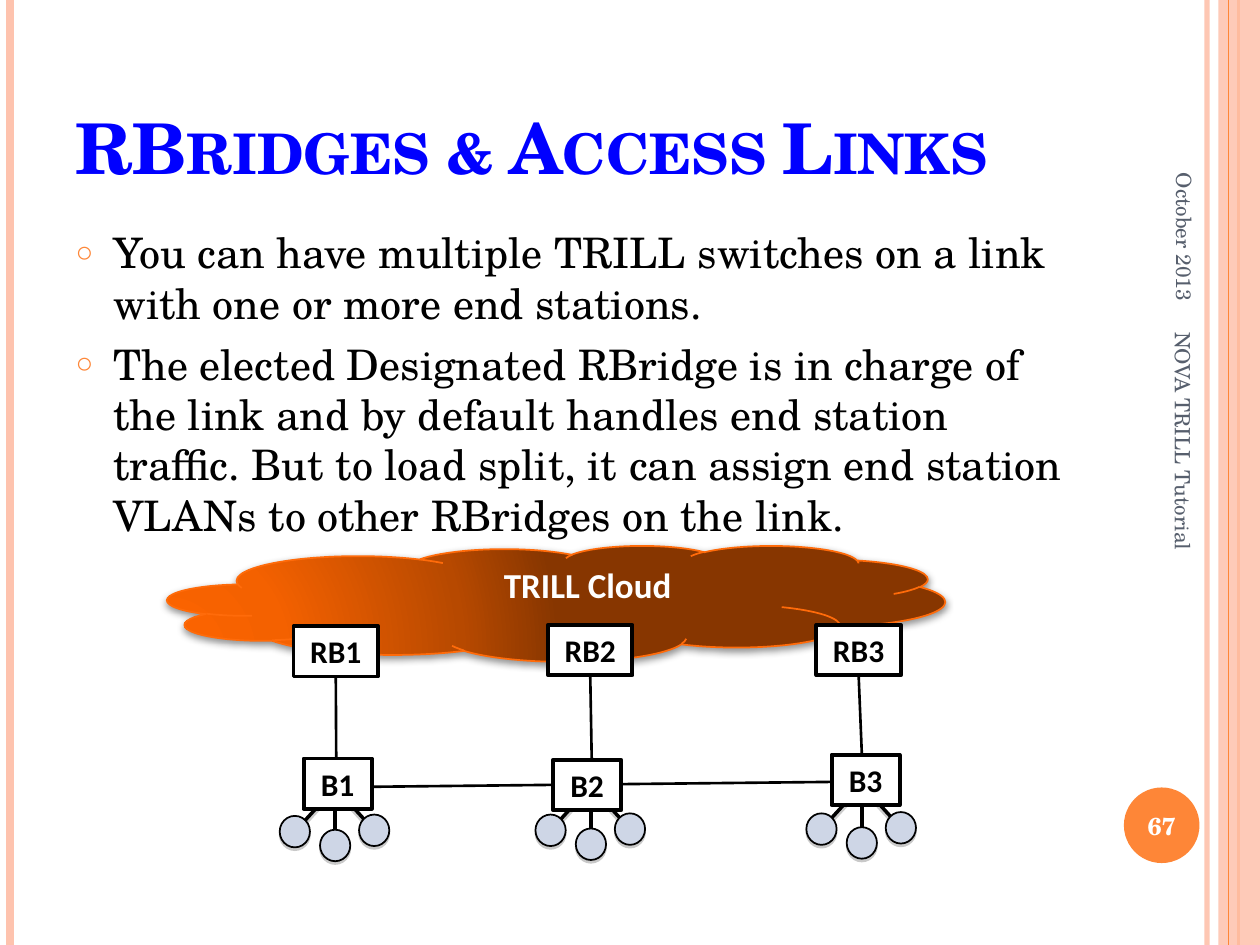
from collections import namedtuple

from lxml.etree import SubElement
from pptx import Presentation
from pptx.dml.color import RGBColor
from pptx.enum.shapes import MSO_CONNECTOR, MSO_SHAPE
from pptx.enum.text import MSO_ANCHOR as Anchor, MSO_AUTO_SIZE as AutoSize, PP_ALIGN as Align
from pptx.oxml import parse_xml
from pptx.oxml.ns import nsdecls, qn
from pptx.util import Inches, Pt

# The slide is a grid of 100 columns by 75 rows.
COLUMNS, ROWS = 100, 75
WIDTH, HEIGHT = Inches(10), Inches(7.5)

WHITE = RGBColor(0xFF, 0xFF, 0xFF)
BLACK = RGBColor(0, 0, 0)
BLUE = RGBColor(0, 0, 0xFF)
SLATE = RGBColor(0x57, 0x5F, 0x6D)
ORANGE = RGBColor(0xFE, 0x86, 0x37)
PEACH = RGBColor(0xFE, 0xC3, 0xAE)
CLOUD_EDGE = RGBColor(0xFF, 0x6B, 0x0A)
HOST_FILL = RGBColor(0xCE, 0xD6, 0xE6)
SHADOW_GREY = RGBColor(0x80, 0x80, 0x80)
CLOUD_STOPS = [(0, "FD6400"), (30, "F46100"), (75, "B74900"), (100, "873600")]

SERIF, SANS = "TeX Gyre Schola", "Calibri"
TITLE_FONT = {"name": SERIF, "size": Pt(40), "bold": True}
BODY_FONT = {"name": SERIF, "size": Pt(24)}
MARGIN_FONT = {"name": SERIF, "size": Pt(12)}
NUMBER_FONT = {"name": SERIF, "size": Pt(14), "bold": True}
NODE_FONT = {"name": SANS, "size": Pt(18), "bold": True}
CLOUD_FONT = {"name": SANS, "size": Pt(20), "bold": True}

Box = namedtuple("Box", "left top width height")
Shadow = namedtuple("Shadow", "color alpha blur distance")
CLOUD_SHADOW = Shadow(BLACK, 42, 4, 1.6)
HOST_SHADOW = Shadow(SHADOW_GREY, 42, 0, 1.6)
DROP_SHADOW = Shadow(SHADOW_GREY, 40, 0, 2)

TITLE = "RBridges & Access Links"
POINTS = [
    "You can have multiple TRILL switches on a link with one or more end stations.",
    "The elected Designated RBridge is in charge of the link and by default handles "
    "end station traffic. But to load split, it can assign end station VLANs to "
    "other RBridges on the link.",
]


def x(column):
    return round(WIDTH * column / COLUMNS)


def y(row):
    return round(HEIGHT * row / ROWS)


def extent(box):
    return x(box.left), y(box.top), x(box.width), y(box.height)


def centred(column, row, width, height):
    return Box(column - width / 2, row - height / 2, width, height)


def set_alpha(color_element, percent):
    SubElement(color_element, qn("a:alpha"), val=str(percent * 1000))


def set_effects(item, shadow=None):
    """Replace the theme shadow by the given one, or by none; call after fill and line."""
    effects = SubElement(item._element.spPr, qn("a:effectLst"))
    if shadow:
        outer = SubElement(
            effects, qn("a:outerShdw"), blurRad=str(Pt(shadow.blur)),
            dist=str(Pt(shadow.distance)), dir="5400000", rotWithShape="0")
        set_alpha(SubElement(outer, qn("a:srgbClr"), val=str(shadow.color)), shadow.alpha)


def add_line(slide, start, end, color, weight, alpha=None, shadow=None):
    line = slide.shapes.add_connector(
        MSO_CONNECTOR.STRAIGHT, x(start[0]), y(start[1]), x(end[0]), y(end[1]))
    line.line.color.rgb = color
    line.line.width = Pt(weight)
    if alpha:
        set_alpha(line._element.spPr.find(".//" + qn("a:srgbClr")), alpha)
    set_effects(line, shadow)


def add_figure(slide, preset, box, fill, edge=None, weight=1, shadow=None):
    figure = slide.shapes.add_shape(preset, *extent(box))
    figure.fill.solid()
    figure.fill.fore_color.rgb = fill
    if edge is None:
        figure.line.fill.background()
    else:
        figure.line.color.rgb = edge
        figure.line.width = Pt(weight)
    set_effects(figure, shadow)
    return figure


def write(frame, lines, font, color, align=Align.LEFT, anchor=Anchor.TOP, wrap=True):
    frame_format = {"word_wrap": wrap, "auto_size": AutoSize.NONE, "vertical_anchor": anchor}
    for key, value in frame_format.items():
        setattr(frame, key, value)
    for index, line in enumerate(lines):
        paragraph = frame.add_paragraph() if index else frame.paragraphs[0]
        paragraph.alignment = align
        run = paragraph.add_run()
        run.text = line
        run.font.color.rgb = color
        for key, value in font.items():
            setattr(run.font, key, value)


def add_label(slide, box, line, font, color, rotation=0, **layout):
    label = slide.shapes.add_textbox(*extent(box))
    label.rotation = rotation
    write(label.text_frame, [line], font, color, **layout)


def place(placeholder, box):
    placeholder.left, placeholder.top, placeholder.width, placeholder.height = extent(box)
    return placeholder.text_frame


def add_stripes(slide):
    for column, color, weight, alpha in [
            (95.8, PEACH, 3, 93), (0.8, PEACH, 4.5, None), (98.3, ORANGE, 1.5, None)]:
        add_line(slide, (column, 0), (column, ROWS), color, weight, alpha)
    band = add_figure(slide, MSO_SHAPE.RECTANGLE, Box(96.7, 0, 3.3, ROWS), PEACH)
    set_alpha(band._element.spPr.find(".//" + qn("a:srgbClr")), 87)
    add_line(slide, (97.5, 0), (97.5, ROWS), ORANGE, 0.75)


def add_margin_notes(slide):
    add_figure(slide, MSO_SHAPE.OVAL, centred(92.2, 65.5, 6, 6), ORANGE)
    add_label(slide, centred(92.2, 65.5, 6.7, 5.7), "67", NUMBER_FONT, WHITE,
              align=Align.CENTER, anchor=Anchor.MIDDLE)
    add_label(slide, centred(94, 13.9, 22, 4.2), "October 2013", MARGIN_FONT, SLATE,
              rotation=90, align=Align.RIGHT, anchor=Anchor.MIDDLE)
    add_label(slide, centred(93.9, 42.9, 35, 4), "NOVA TRILL Tutorial", MARGIN_FONT, SLATE,
              rotation=90, anchor=Anchor.MIDDLE)


def add_title(slide, box):
    frame = place(slide.shapes.title, box)
    write(frame, [TITLE], TITLE_FONT, BLUE, anchor=Anchor.BOTTOM)
    frame.paragraphs[0].runs[0].font._element.set("cap", "small")


def add_points(slide, box):
    frame = place(slide.placeholders[1], box)
    write(frame, POINTS, BODY_FONT, BLACK)
    for paragraph in frame.paragraphs:
        paragraph.space_before = Pt(6)
        properties = paragraph._p.get_or_add_pPr()
        properties.set("marL", str(Inches(0.3)))
        properties.set("indent", str(-Inches(0.3)))
        bullet_color = SubElement(properties, qn("a:buClr"))
        SubElement(bullet_color, qn("a:srgbClr"), val=str(ORANGE))
        SubElement(properties, qn("a:buSzPct"), val="70000")
        SubElement(properties, qn("a:buChar"), char="○")


def add_cloud(slide, box):
    cloud = add_figure(slide, MSO_SHAPE.CLOUD, box, CLOUD_EDGE, CLOUD_EDGE, 1, CLOUD_SHADOW)
    stops = "".join(f'<a:gs pos="{share * 1000}"><a:srgbClr val="{color}"/></a:gs>'
                    for share, color in CLOUD_STOPS)
    gradient = parse_xml(
        f'<a:gradFill {nsdecls("a")} rotWithShape="1"><a:gsLst>{stops}</a:gsLst>'
        '<a:path path="circle"><a:fillToRect l="5000" t="100000" r="120000" b="10000"/>'
        '</a:path></a:gradFill>')
    properties = cloud._element.spPr
    properties.replace(properties.find(qn("a:solidFill")), gradient)


def add_node(slide, box, name):
    node = add_figure(slide, MSO_SHAPE.RECTANGLE, box, WHITE, BLACK, 2.25)
    write(node.text_frame, [name], NODE_FONT, BLACK, Align.CENTER, wrap=False)


def add_access_link(slide, number, hub, switch, bridge):
    """Draw one RBridge, its bridge and three end stations; points are centres."""
    add_node(slide, centred(*switch, 6.7, 4), f"RB{number}")
    add_line(slide, (hub[0] + 0.1, hub[1]), (switch[0], switch[1] + 2.1), BLACK, 1.5)
    for across, down in [(0, 4.6), (3.1, 3.4), (-3.2, 3.5)]:
        host = hub[0] + across, hub[1] + down
        add_line(slide, hub, host, BLACK, 2, shadow=DROP_SHADOW)
        add_figure(slide, MSO_SHAPE.OVAL, centred(*host, 2.4, 2.5),
                   HOST_FILL, BLACK, 1, HOST_SHADOW)
    add_node(slide, centred(*bridge, 5.4, 4), f"B{number}")


def add_network(slide, box):
    add_cloud(slide, box)
    add_line(slide, (24.2, 62.5), (71.2, 62), BLACK, 1.5)
    links = [((26.6, 62.5), (26.65, 51.7), (26.8, 62.2)),
             ((46.9, 62.4), (46.85, 51.6), (46.6, 62.3)),
             ((68.4, 62.3), (68.15, 51.6), (68.7, 61.9))]
    for number, centres in enumerate(links, 1):
        add_access_link(slide, number, *centres)
    add_label(slide, Box(box.left + 20, box.top + 0.9, 26.7, 4.4), "TRILL Cloud",
              CLOUD_FONT, WHITE, align=Align.CENTER)


def main():
    deck = Presentation()
    deck.slide_width, deck.slide_height = WIDTH, HEIGHT
    slide = deck.slides.add_slide(deck.slide_layouts[1])
    add_stripes(slide)
    add_margin_notes(slide)
    add_title(slide, Box(5, 3, 81.7, 12.5))
    add_points(slide, Box(5, 17.5, 81.7, 25.8))
    add_network(slide, Box(13.3, 43.3, 61.7, 9.2))
    deck.save("out.pptx")


if __name__ == "__main__":
    main()
